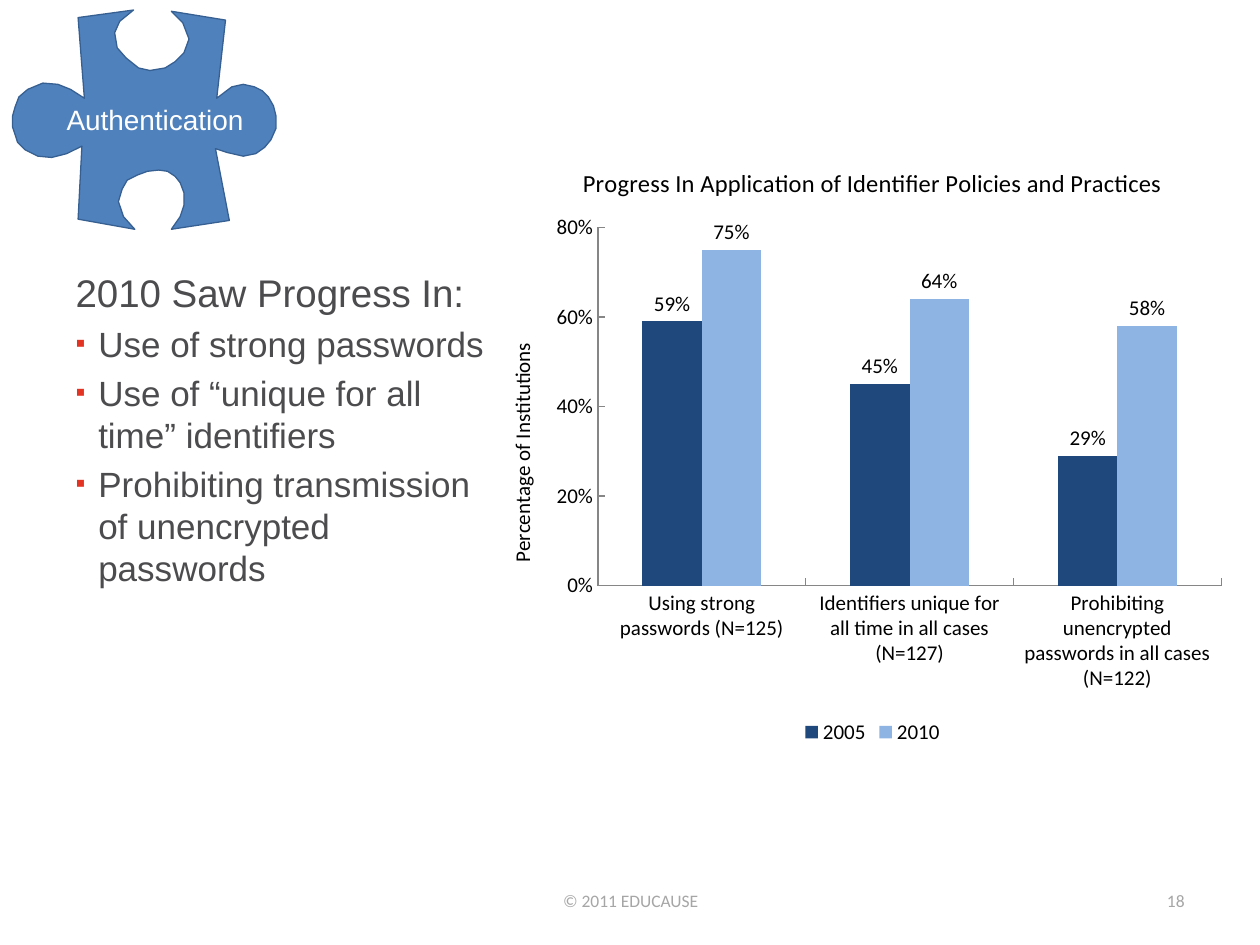
from lxml import etree
from pptx import Presentation
from pptx import util as u
from pptx.chart import data
from pptx.dml.color import RGBColor
from pptx.enum import chart as ch, text
from pptx.oxml import parse_xml
from pptx.oxml.ns import nsdecls, qn

COLORS = {"piece": "4F81BD", "edge": "376092", "body": "4C4C4F", "bullet": "E33323",
          "2005": "1F497D", "2010": "8EB4E3", "axis": "868686", "footer": "A6A6A6",
          "white": "FFFFFF", "black": "000000"}

presentation = Presentation()
presentation.slide_width, presentation.slide_height = u.Inches(10), u.Inches(7.5)
slide = presentation.slides.add_slide(presentation.slide_layouts[1])
title = slide.shapes.title
title.element.getparent().remove(title.element)


def box(left, top, width, height):
    """Turn percentages of the slide's size into a position and size."""
    across, down = presentation.slide_width / 100, presentation.slide_height / 100
    return int(left * across), int(top * down), int(width * across), int(height * down)


def style(font, size, color, name):
    font.size, font.name, font.bold = u.Pt(size), name, False
    font.color.rgb = RGBColor.from_string(COLORS[color])


# Findings
body = slide.placeholders[1]
body.left, body.top, body.width, body.height = box(5, 27.8, 34.8, 56.7)
body.text_frame.auto_size = text.MSO_AUTO_SIZE.NONE
findings = ["2010 Saw Progress In:", "Use of strong passwords",
            "Use of “unique for all time” identifiers",
            "Prohibiting transmission of unencrypted passwords"]
for index, finding in enumerate(findings):
    paragraph = body.text_frame.paragraphs[0] if index == 0 else body.text_frame.add_paragraph()
    properties = paragraph._p.get_or_add_pPr()
    properties.set("marL", str(u.Inches(0.18)))
    properties.set("indent", str(u.Inches(-0.18)))
    paragraph.space_before = u.Pt(4 if index else 0)
    if index:
        color = etree.SubElement(properties, qn("a:buClr"))
        etree.SubElement(color, qn("a:srgbClr"), val=COLORS["bullet"])
        etree.SubElement(properties, qn("a:buSzPct"), val="80000")
        etree.SubElement(properties, qn("a:buFont"), typeface="Arial")
        etree.SubElement(properties, qn("a:buChar"), char="▪")
    else:
        etree.SubElement(properties, qn("a:buNone"))
    run = paragraph.add_run()
    run.text = finding
    style(run.font, 20 if index else 22, "body", "Arial")

# Puzzle piece, outlined in hundredths of an inch
outline = [
    (172, 78), (179, 16), (136, 9), (145, 18), (150, 31), (146, 42), (139, 49), (131, 54),
    (119, 56), (110, 54), (100, 46), (93, 38), (91, 26), (95, 17), (106, 8), (62, 14),
    (67, 78), (56, 71), (46, 67), (34, 66), (22, 71), (15, 77), (12, 85), (10, 92),
    (10, 101), (14, 113), (20, 119), (30, 124), (41, 125), (53, 122), (65, 116), (62, 174),
    (107, 182), (98, 172), (94, 160), (97, 150), (101, 143), (109, 139), (117, 136),
    (126, 135), (133, 136), (139, 140), (143, 145), (146, 153), (146, 163), (143, 172),
    (136, 182), (182, 175), (171, 118), (180, 121), (193, 124), (203, 122), (210, 117),
    (215, 111), (219, 102), (219, 92), (217, 84), (213, 77), (208, 72), (202, 69),
    (193, 67), (184, 69)]
builder = slide.shapes.build_freeform(*outline[0], scale=u.Inches(0.01))
builder.add_line_segments(outline[1:], close=True)
piece = builder.convert_to_shape()
piece.shadow.inherit = False
piece.fill.solid()
piece.fill.fore_color.rgb = RGBColor.from_string(COLORS["piece"])
piece.line.color.rgb = RGBColor.from_string(COLORS["edge"])
piece.line.width = u.Pt(0.75)

# Puzzle label, footer and slide number
center, right = text.PP_ALIGN.CENTER, text.PP_ALIGN.RIGHT
labels = [("Authentication", box(4.2, 10.15, 16.2, 4.9), center, 16, "white", "Arial"),
          ("18", box(71.7, 92.7, 23.3, 5.3), right, 10, "footer", "Calibri"),
          ("© 2011 EDUCAUSE", box(34.2, 92.7, 31.7, 5.3), center, 10, "footer", "Calibri")]
for wording, place, alignment, size, color, name in labels:
    frame = slide.shapes.add_textbox(*place).text_frame
    frame.word_wrap = name == "Calibri"
    frame.vertical_anchor = text.MSO_ANCHOR.MIDDLE
    paragraph = frame.paragraphs[0]
    paragraph.alignment = alignment
    run = paragraph.add_run()
    run.text = wording
    style(run.font, size, color, name)

# Progress chart
progress = data.CategoryChartData(number_format="0%")
progress.categories = ["Using strong passwords (N=125)",
                       "Identifiers unique for all time in all cases (N=127)",
                       "Prohibiting unencrypted passwords in all cases (N=122)"]
progress.add_series("2005", (0.59, 0.45, 0.29))
progress.add_series("2010", (0.75, 0.64, 0.58))
chart = slide.shapes.add_chart(ch.XL_CHART_TYPE.COLUMN_CLUSTERED,
                               *box(39.8, 15.07, 58.9, 64.27), progress).chart
style(chart.font, 12, "black", "Calibri")
chart.has_legend = True
chart.legend.position = ch.XL_LEGEND_POSITION.BOTTOM
chart.legend.include_in_layout = False

category_axis, value_axis = chart.category_axis, chart.value_axis
value_axis.minimum_scale, value_axis.maximum_scale, value_axis.major_unit = 0, 0.8, 0.2
value_axis.has_major_gridlines = False
value_axis.tick_labels.number_format = "0%"
value_axis.tick_labels.number_format_is_linked = False
for axis in (category_axis, value_axis):
    axis.major_tick_mark = ch.XL_TICK_MARK.INSIDE
    axis.format.line.color.rgb = RGBColor.from_string(COLORS["axis"])

headings = [(chart.chart_title, "Progress In Application of Identifier Policies and Practices", 14),
            (value_axis.axis_title, "Percentage of Institutions", 12)]
for heading, wording, size in headings:
    run = heading.text_frame.paragraphs[0].add_run()
    run.text = wording
    style(run.font, size, "black", "Calibri")

plot = chart.plots[0]
plot.gap_width, plot.overlap, plot.vary_by_categories = 150, 0, False
for series in plot.series:
    series.format.fill.solid()
    series.format.fill.fore_color.rgb = RGBColor.from_string(COLORS[series.name])
    values = series.data_labels
    values.show_value = True
    values.number_format, values.number_format_is_linked = "0%", False
    values.position = ch.XL_LABEL_POSITION.OUTSIDE_END

plot_area = chart.element.find(".//" + qn("c:plotArea"))
for layout in plot_area.findall(qn("c:layout")):
    plot_area.remove(layout)
plot_area.insert(0, parse_xml(
    f'<c:layout {nsdecls("c")}><c:manualLayout><c:layoutTarget val="inner"/>'
    '<c:xMode val="edge"/><c:yMode val="edge"/><c:x val="0.13"/><c:y val="0.14"/>'
    '<c:w val="0.84"/><c:h val="0.59"/></c:manualLayout></c:layout>'))

presentation.save("out.pptx")
